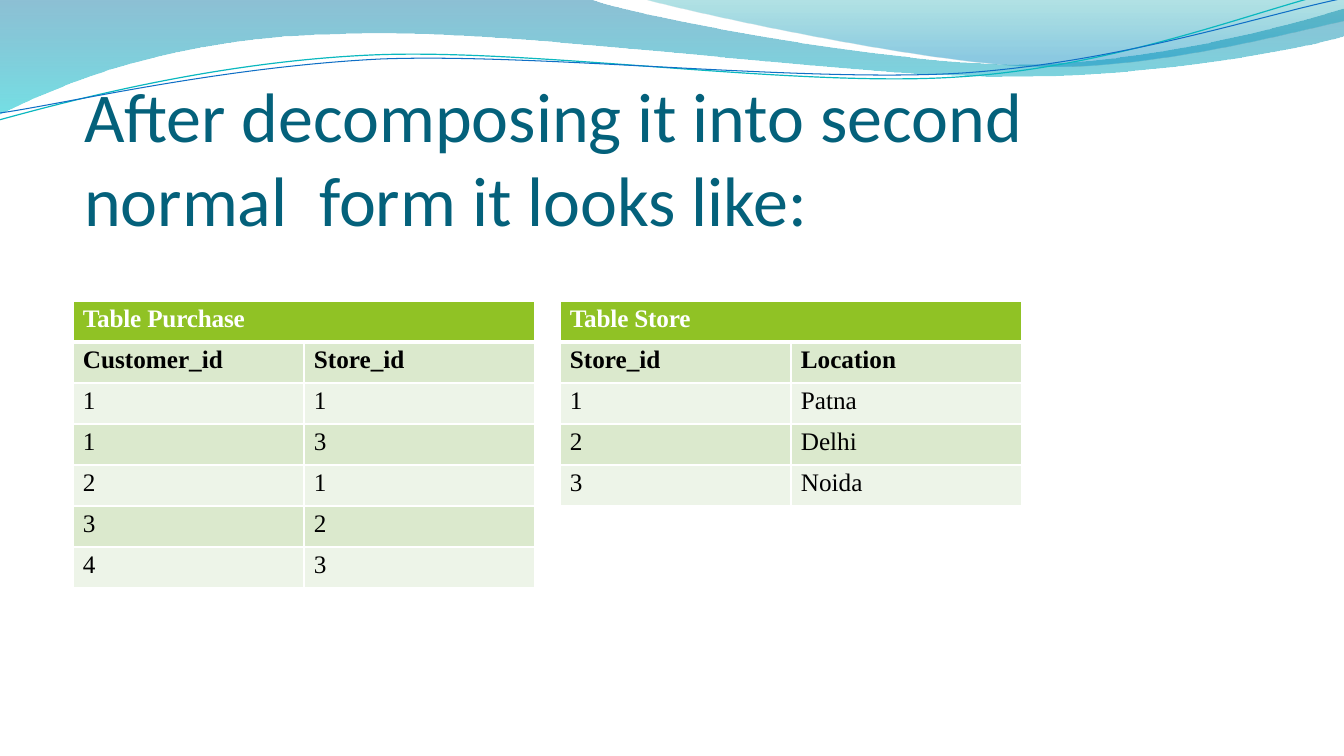
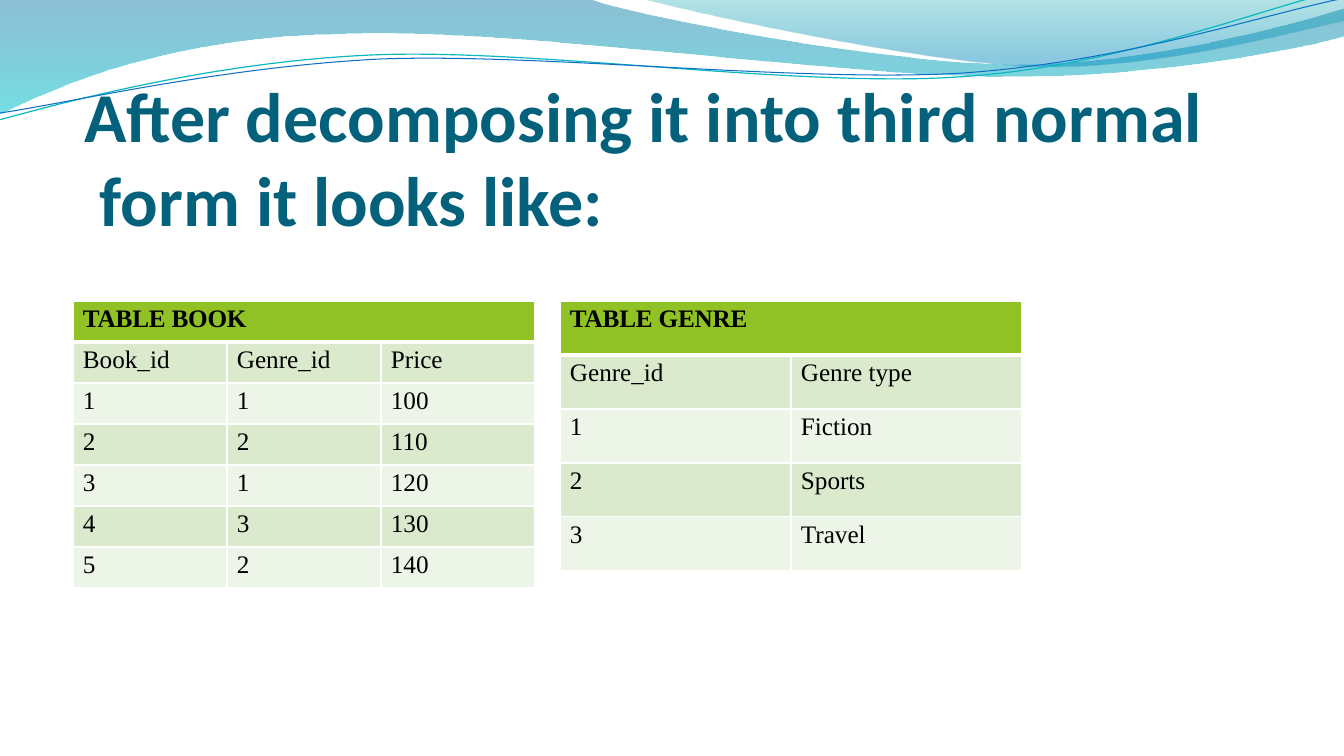
from pptx import Presentation, util as u
from pptx.dml.color import RGBColor
from pptx.enum import text
from pptx.oxml import parse_xml
from pptx.oxml.ns import nsdecls

# Content
SLIDES = [
    {
        "title": "After decomposing it into second normal  form it looks like:",
        "title_width": 1151,
        "bold_title": False,
        "caption_color": "FFFFFF",
        "bold_headings": True,
        "tables": [
            {"caption": "Table Purchase", "row_height": 41, "rows": [
                ("Customer_id", "Store_id"),
                ("1", "1"), ("1", "3"), ("2", "1"), ("3", "2"), ("4", "3")]},
            {"caption": "Table Store", "row_height": 41, "rows": [
                ("Store_id", "Location"),
                ("1", "Patna"), ("2", "Delhi"), ("3", "Noida")]},
        ],
    },
    {
        "title": "After decomposing it into third normal  form it looks like:",
        "title_width": 1126,
        "bold_title": True,
        "caption_color": "000000",
        "bold_headings": False,
        "tables": [
            {"caption": "TABLE BOOK", "row_height": 41, "rows": [
                ("Book_id", "Genre_id", "Price"),
                ("1", "1", "100"), ("2", "2", "110"), ("3", "1", "120"),
                ("4", "3", "130"), ("5", "2", "140")]},
            {"caption": "TABLE GENRE", "row_height": 54, "rows": [
                ("Genre_id", "Genre type"),
                ("1", "Fiction"), ("2", "Sports"), ("3", "Travel")]},
        ],
    },
]

# Shared look, lengths in px
SLIDE_W, SLIDE_H = 1344, 756
TITLE_LEFT, TITLE_TOP, TITLE_H = 84, 70, 171
TITLE_FONT, TITLE_COLOR = "Calibri", "04617B"
TABLE_FONT, TABLE_COLOR = "Times New Roman", "000000"
TABLE_LEFT, TABLE_TOP, TABLE_W, TABLE_GAP = 73, 301, 462, 25
CAPTION_FILL, BANDS = "90C225", ("DBE9CD", "EDF4E8")
CAPTION_SPACING = -15  # hundredths of a point
THIN, THICK = 1, 3

# Outlines: a pair is a line end, six numbers are two Bezier controls and an end.
# Gradient stops are (position %, colour, opacity %).
WAVES = [
    {"outline": [(0, 0), (592, 0), (639, 17, 892, 64, 1019, 64),
                 (1147, 64, 1288, 26, 1344, 9), (1346, 36),
                 (1321, 44, 1169, 77, 1002, 76), (836, 76, 513, 28, 346, 34),
                 (173, 36, 61, 84, -1, 114)],
     "gradient": [(0, "0074A1", 45), (100, "00C6CF", 55)]},
    {"outline": [(644, 0), (684, 11, 916, 62, 1033, 66),
                 (1150, 70, 1292, 32, 1344, 21), (1344, 0)],
     "gradient": [(0, "00A1A9", 30), (80, "008BBF", 45)]},
    {"outline": [(-1, 120), (65, 102, 213, 62, 372, 55),
                 (531, 48, 796, 88, 958, 77), (1119, 67, 1262, 8, 1342, -10)],
     "line": ("0AB8BF", 0.85)},
    {"outline": [(0, 113), (64, 104, 220, 67, 381, 59),
                 (541, 53, 802, 83, 963, 73), (1124, 62, 1265, 14, 1345, -2)],
     "line": ("0F6FC6", 0.75)},
]


def px(length):
    return u.Emu(round(length * 914400 / 100.8))


def color(value):
    return RGBColor.from_string(value)


def format_runs(paragraph, font, size, value, bold, spacing=0):
    for run in paragraph.runs:
        run.font.name, run.font.size, run.font.bold = font, u.Pt(size), bold
        run.font.color.rgb = color(value)
        if spacing:
            run._r.get_or_add_rPr().set("spc", str(spacing))


def build_outline(slide, outline, closed):
    """Build straight segments through all points, then join controls to curves."""
    points = [(px(step[i]), px(step[i + 1]))
              for step in outline for i in range(0, len(step), 2)]
    builder = slide.shapes.build_freeform(*points[0])
    builder.add_line_segments(points[1:], close=closed)
    shape = builder.convert_to_shape()
    segments = iter(list(shape.element.iter("{*}lnTo")))
    for step in outline[1:]:
        first = next(segments)
        if len(step) == 6:
            curve = parse_xml(f'<a:cubicBezTo {nsdecls("a")}/>')
            first.addprevious(curve)
            for segment in (first, next(segments), next(segments)):
                curve.append(segment[0])
                segment.getparent().remove(segment)
    return shape


def fill_gradient(shape, stops):
    """Fill from top to bottom with partly transparent stops."""
    marks = "".join(
        f'<a:gs pos="{position * 1000}"><a:srgbClr val="{value}">'
        f'<a:alpha val="{opacity * 1000}"/></a:srgbClr></a:gs>'
        for position, value, opacity in stops)
    gradient = parse_xml(f'<a:gradFill {nsdecls("a")} rotWithShape="1"><a:gsLst>{marks}'
                         '</a:gsLst><a:lin ang="5400000" scaled="0"/></a:gradFill>')
    shape.fill.background()
    properties = shape.element.spPr
    properties.replace(properties.find("{*}noFill"), gradient)


def add_waves(slide, layout):
    """Draw the waves with the slide's builder and move them to its layout."""
    for order, wave in enumerate(WAVES):
        shape = build_outline(slide, wave["outline"], "gradient" in wave)
        shape.shadow.inherit = False
        if "gradient" in wave:
            fill_gradient(shape, wave["gradient"])
            shape.line.fill.background()
        else:
            value, width = wave["line"]
            shape.fill.background()
            shape.line.color.rgb, shape.line.width = color(value), u.Pt(width)
        layout.shapes.element.insert(2 + order, shape.element)


def prepare_layout(layout):
    """Keep only the title placeholder and set its frame."""
    title, *unused = list(layout.placeholders)
    for placeholder in unused:
        placeholder.element.getparent().remove(placeholder.element)
    frame = title.text_frame
    frame.vertical_anchor = text.MSO_ANCHOR.BOTTOM
    frame.auto_size = text.MSO_AUTO_SIZE.NONE
    frame.margin_left = frame.margin_right = frame.margin_bottom = 0
    frame.margin_top = px(1)


def set_title(slide, wording, width, bold):
    title = slide.shapes.title
    title.left, title.top = px(TITLE_LEFT), px(TITLE_TOP)
    title.width, title.height = px(width), px(TITLE_H)
    title.text_frame.text = wording
    paragraph = title.text_frame.paragraphs[0]
    paragraph.alignment = text.PP_ALIGN.LEFT
    format_runs(paragraph, TITLE_FONT, 50, TITLE_COLOR, bold)


def set_borders(cell, top, bottom):
    properties = cell._tc.get_or_add_tcPr()
    widths = {"lnL": THIN, "lnR": THIN, "lnT": top, "lnB": bottom}
    for order, (side, width) in enumerate(widths.items()):
        properties.insert(order, parse_xml(
            f'<a:{side} {nsdecls("a")} w="{u.Pt(width)}"><a:solidFill>'
            f'<a:srgbClr val="FFFFFF"/></a:solidFill></a:{side}>'))


def fill_cell(cell, wording, fill, font_color, bold, spacing=0):
    cell.fill.solid()
    cell.fill.fore_color.rgb = color(fill)
    cell.margin_left, cell.margin_top = px(10), px(4)
    cell.margin_right = cell.margin_bottom = 0
    cell.text_frame.text = wording
    paragraph = cell.text_frame.paragraphs[0]
    paragraph.space_before = u.Pt(3.1)
    format_runs(paragraph, TABLE_FONT, 18, font_color, bold, spacing)


def add_relation(slide, relation, left, caption_color, bold_headings):
    """Add one database table: caption, column headings, records."""
    columns = len(relation["rows"][0])
    rows = [(relation["caption"],) + ("",) * (columns - 1)] + relation["rows"]
    height = relation["row_height"]
    table = slide.shapes.add_table(len(rows), columns, px(left), px(TABLE_TOP),
                                   px(TABLE_W), px(height * len(rows))).table
    table.first_row = table.horz_banding = False
    for r, values in enumerate(rows):
        table.rows[r].height = px(height)
        for c, value in enumerate(values):
            cell = table.cell(r, c)
            if r == 0:
                fill_cell(cell, value, CAPTION_FILL, caption_color, True,
                          CAPTION_SPACING)
            else:
                fill_cell(cell, value, BANDS[(r - 1) % 2], TABLE_COLOR,
                          bold_headings and r == 1)
            set_borders(cell, THICK if r == 1 else THIN, THICK if r == 0 else THIN)
    table.cell(0, 0).merge(table.cell(0, columns - 1))


def main():
    deck = Presentation()
    deck.slide_width, deck.slide_height = px(SLIDE_W), px(SLIDE_H)
    layout = deck.slide_layouts.get_by_name("Title Only")
    prepare_layout(layout)
    for number, content in enumerate(SLIDES):
        slide = deck.slides.add_slide(layout)
        if number == 0:
            add_waves(slide, layout)
        set_title(slide, content["title"], content["title_width"],
                  content["bold_title"])
        for order, relation in enumerate(content["tables"]):
            add_relation(slide, relation, TABLE_LEFT + order * (TABLE_W + TABLE_GAP),
                         content["caption_color"], content["bold_headings"])
    deck.save("out.pptx")


if __name__ == "__main__":
    main()
